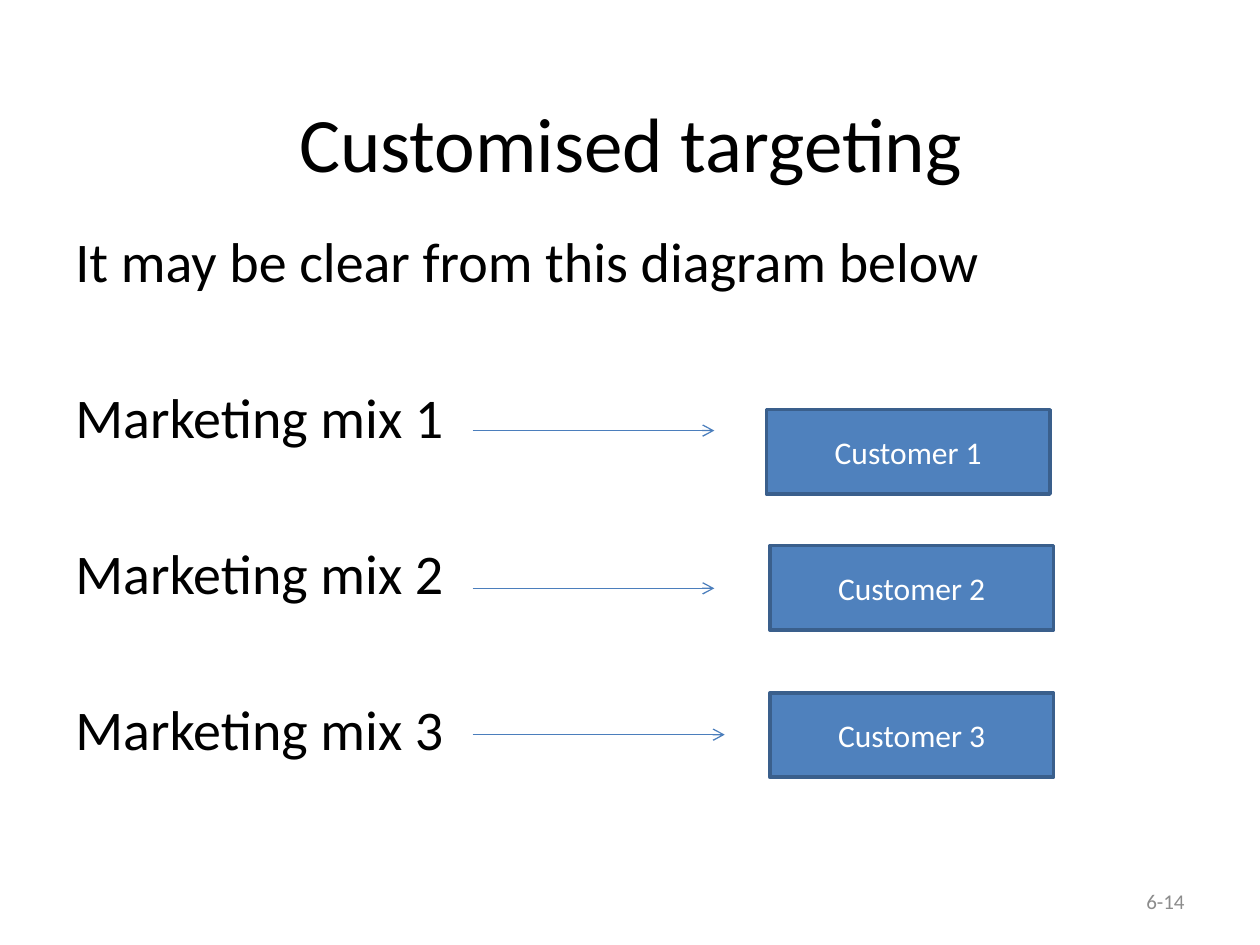
from lxml import etree
from pptx import Presentation
from pptx.dml.color import RGBColor
from pptx.enum.shapes import MSO_CONNECTOR, MSO_SHAPE
from pptx.enum.text import MSO_ANCHOR, PP_ALIGN
from pptx.oxml.ns import qn
from pptx.util import Cm, Pt

RECTANGLE = MSO_SHAPE.RECTANGLE
STRAIGHT = MSO_CONNECTOR.STRAIGHT
TOP, MIDDLE = MSO_ANCHOR.TOP, MSO_ANCHOR.MIDDLE
LEFT, CENTER, RIGHT = PP_ALIGN.LEFT, PP_ALIGN.CENTER, PP_ALIGN.RIGHT

FONT = "Calibri"
COLORS = {
    "text": "000000",
    "customer": "4F81BD",
    "border": "3A5F8C",
    "label": "FFFFFF",
    "arrow": "4B7EBC",
    "number": "8C8C8C",
}
ARROW_LEFT = 9.53
MIX_GAP = 50.7

# customer left, customer top, arrow right, arrow height
ROWS = [
    (15.45, 8.26, 14.4, 8.68),
    (15.52, 11.0, 14.4, 11.86),
    (15.52, 13.97, 14.61, 14.81),
]


def color(name):
    return RGBColor.from_string(COLORS[name])


def write(frame, lines, size, color_name, align, anchor, gap=0):
    frame.word_wrap = True
    frame.vertical_anchor = anchor
    for index, line in enumerate(lines):
        paragraph = frame.paragraphs[0] if index == 0 else frame.add_paragraph()
        paragraph.alignment = align
        paragraph.space_before = Pt(gap if index else 0)
        run = paragraph.add_run()
        run.text = line
        run.font.name = FONT
        run.font.size = Pt(size)
        run.font.color.rgb = color(color_name)


def add_text(slide, box, lines, size, color_name, align, anchor, gap=0):
    area = slide.shapes.add_textbox(*map(Cm, box))
    write(area.text_frame, lines, size, color_name, align, anchor, gap)


def add_customer(slide, left, top, label):
    customer = slide.shapes.add_shape(RECTANGLE, Cm(left), Cm(top), Cm(5.72), Cm(1.7))
    customer.shadow.inherit = False
    customer.fill.solid()
    customer.fill.fore_color.rgb = color("customer")
    customer.line.color.rgb = color("border")
    customer.line.width = Pt(2)
    write(customer.text_frame, [label], 18, "label", CENTER, MIDDLE)


def add_arrow(slide, right, height):
    arrow = slide.shapes.add_connector(
        STRAIGHT, Cm(ARROW_LEFT), Cm(height), Cm(right), Cm(height)
    )
    arrow.line.color.rgb = color("arrow")
    arrow.line.width = Pt(0.75)
    etree.SubElement(arrow.line._get_or_add_ln(), qn("a:tailEnd"), type="arrow")
    etree.SubElement(arrow._element.spPr, qn("a:effectLst"))


def main():
    deck = Presentation()
    deck.slide_width, deck.slide_height = Cm(25.4), Cm(19.05)
    slide = deck.slides.add_slide(deck.slide_layouts[6])

    add_text(slide, (1.07, 1.27, 23.29, 3.18), ["Customised targeting"],
             44, "text", CENTER, MIDDLE)
    mixes = [f"Marketing mix {number}" for number in range(1, len(ROWS) + 1)]
    add_text(slide, (1.27, 4.45, 22.86, 13.54),
             ["It may be clear from this diagram below", *mixes],
             32, "text", LEFT, TOP, MIX_GAP)

    for number, (left, top, _, _) in enumerate(ROWS, 1):
        add_customer(slide, left, top, f"Customer {number}")
    for _, _, right, height in ROWS:
        add_arrow(slide, right, height)

    add_text(slide, (18.21, 17.65, 5.92, 1.02), ["6-14"], 12, "number", RIGHT, MIDDLE)
    deck.save("out.pptx")


if __name__ == "__main__":
    main()
